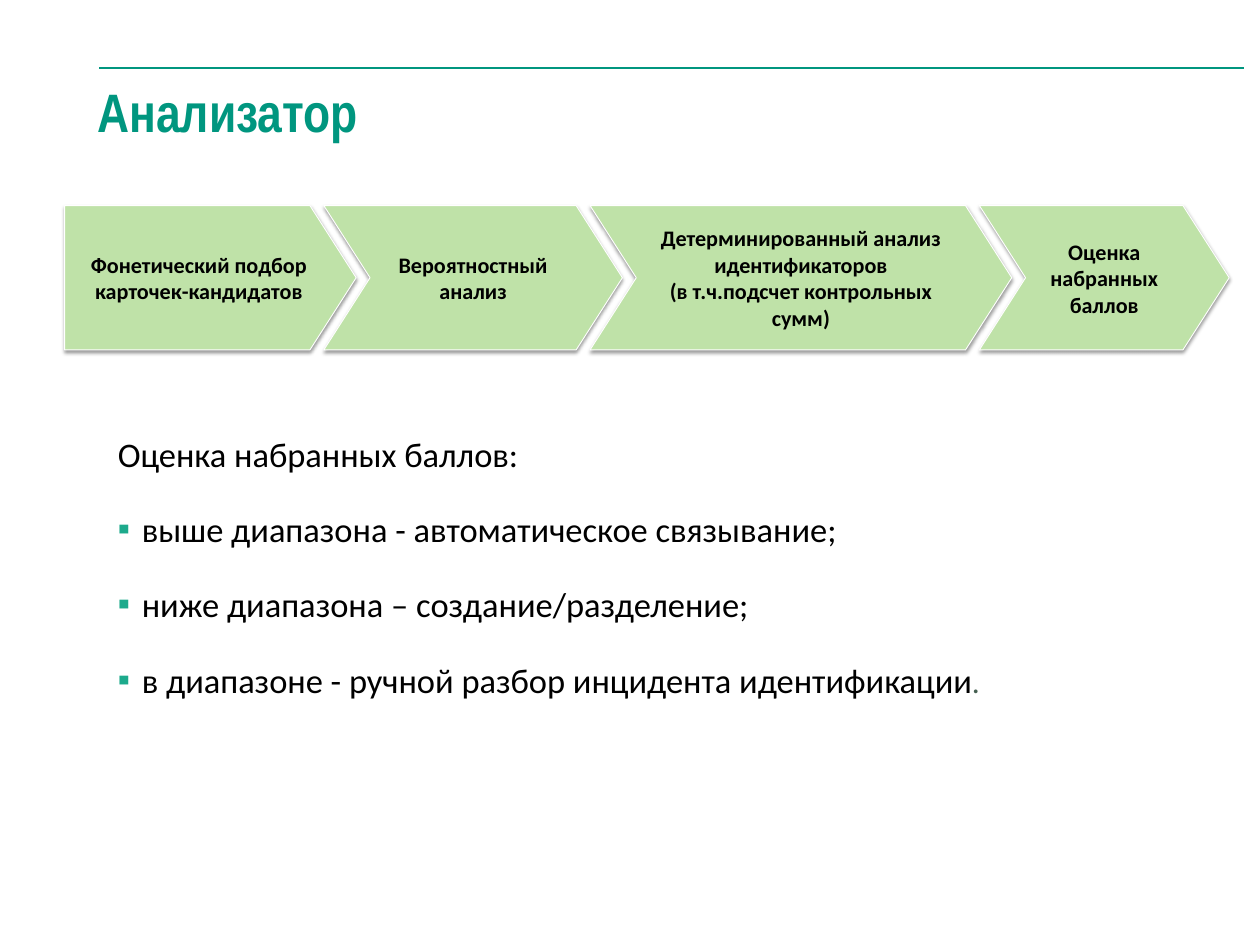
from lxml.etree import SubElement
from pptx import Presentation
from pptx.dml.color import RGBColor
from pptx.enum.shapes import MSO_CONNECTOR, MSO_SHAPE
from pptx.enum.text import MSO_ANCHOR, MSO_AUTO_SIZE, PP_ALIGN
from pptx.oxml.ns import qn
from pptx.util import Inches, Pt

WIDTH, HEIGHT = Inches(14.22), Inches(10.67)
COLUMN, ROW = WIDTH / 100, HEIGHT / 100

TEAL = RGBColor(0x00, 0x96, 0x7F)
MINT = RGBColor(0x1D, 0xAA, 0x8C)
LIGHT_GREEN = RGBColor(0xBF, 0xE2, 0xA8)
DARK_GREEN = RGBColor(0x45, 0x5F, 0x51)
BLACK = RGBColor(0x00, 0x00, 0x00)
WHITE = RGBColor(0xFF, 0xFF, 0xFF)

STEPS_LEFT, STEPS_TOP, STEP_HEIGHT, STEP_OVERLAP = 5.13, 21.75, 15.28, 2.57
STEPS = [
    ("Фонетический подбор карточек-кандидатов", 23.14),
    ("Вероятностный анализ", 23.7),
    ("Детерминированный анализ идентификаторов\n(в т.ч.подсчет контрольных сумм)", 33.47),
    ("Оценка набранных баллов", 19.83),
]
OUTCOMES = [
    "выше диапазона - автоматическое связывание;",
    "ниже диапазона – создание/разделение;",
    "в диапазоне - ручной разбор инцидента идентификации",
]


def grid(left, top, width, height):
    return [round(n) for n in (left * COLUMN, top * ROW, width * COLUMN, height * ROW)]


def set_font(font, name, size, color, bold=False):
    font.name, font.size, font.bold = name, Pt(size), bold
    font.color.rgb = color


def set_indent(para, left, first):
    properties = para._p.get_or_add_pPr()
    properties.set("marL", str(Inches(left)))
    properties.set("indent", str(Inches(first)))
    return properties


def place_holder(holder, area, inset):
    holder.left, holder.top, holder.width, holder.height = grid(*area)
    frame = holder.text_frame
    frame.margin_left = frame.margin_right = Inches(inset)
    frame.margin_top = frame.margin_bottom = Inches(inset)
    frame.vertical_anchor = MSO_ANCHOR.TOP
    frame.auto_size = MSO_AUTO_SIZE.NONE
    frame.word_wrap = True
    return frame


def add_title(page):
    para = place_holder(page.shapes.title, (7.31, 7.69, 91.91, 13.12), 0.06).paragraphs[0]
    para.text = "Анализатор"
    para.alignment = PP_ALIGN.LEFT
    set_indent(para, 0.05, -0.05)
    set_font(para.font, "Arial Narrow", 44, TEAL, True)


def add_rule(page):
    left, top, right, bottom = grid(7.88, 7.22, 98.73, 7.22)
    rule = page.shapes.add_connector(MSO_CONNECTOR.STRAIGHT, left, top, right, bottom)
    rule.line.color.rgb = TEAL
    rule.line.width = Pt(2)
    SubElement(rule._element.spPr, qn("a:effectLst"))


def add_shadow(shape):
    shape.shadow.inherit = False
    effects = shape._element.spPr.find(qn("a:effectLst"))
    shadow = SubElement(effects, qn("a:outerShdw"), blurRad=str(Pt(3.1)),
                        dist=str(Pt(1.6)), dir="5400000", rotWithShape="0")
    color = SubElement(shadow, qn("a:srgbClr"), val=str(BLACK))
    SubElement(color, qn("a:alpha"), val="38000")


def add_step(page, kind, left, width, text):
    step = page.shapes.add_shape(kind, *grid(left, STEPS_TOP, width, STEP_HEIGHT))
    step.adjustments[0] = 0.32
    step.fill.solid()
    step.fill.fore_color.rgb = LIGHT_GREEN
    step.line.color.rgb = WHITE
    step.line.width = Pt(0.75)
    add_shadow(step)
    step.text_frame.word_wrap = True
    step.text_frame.vertical_anchor = MSO_ANCHOR.MIDDLE
    para = step.text_frame.paragraphs[0]
    para.text = text
    para.alignment = PP_ALIGN.CENTER
    set_font(para.font, "Calibri", 18, BLACK, True)


def add_steps(page):
    left = STEPS_LEFT
    for number, (text, width) in enumerate(STEPS):
        kind = MSO_SHAPE.CHEVRON if number else MSO_SHAPE.PENTAGON
        add_step(page, kind, left, width, text)
        left += width - STEP_OVERLAP


def add_outcome(frame, text):
    para = frame.add_paragraph()
    para.text = text
    para.line_spacing = 1.5
    para.space_before = Pt(10.7)
    properties = set_indent(para, 0.27, -0.27)
    color = SubElement(properties, qn("a:buClr"))
    SubElement(color, qn("a:srgbClr"), val=str(MINT))
    SubElement(properties, qn("a:buFont"), typeface="Calibri")
    SubElement(properties, qn("a:buChar"), char="▪")
    set_font(para.font, "Calibri", 28, BLACK)
    return para


def add_body(page):
    frame = place_holder(page.placeholders[1], (8.37, 44.52, 91.63, 27.84), 0.14)
    heading = frame.paragraphs[0]
    heading.text = "Оценка набранных баллов:"
    heading.space_before = Pt(0)
    SubElement(set_indent(heading, 0, 0), qn("a:buNone"))
    set_font(heading.font, "Calibri", 28, BLACK)
    outcomes = [add_outcome(frame, text) for text in OUTCOMES]
    span = outcomes[-1].add_run()
    span.text = "."
    set_font(span.font, "Calibri", 25.6, DARK_GREEN)


def main():
    deck = Presentation()
    deck.slide_width, deck.slide_height = WIDTH, HEIGHT
    page = deck.slides.add_slide(deck.slide_layouts[1])
    add_title(page)
    add_rule(page)
    add_steps(page)
    add_body(page)
    deck.save("out.pptx")


if __name__ == "__main__":
    main()
